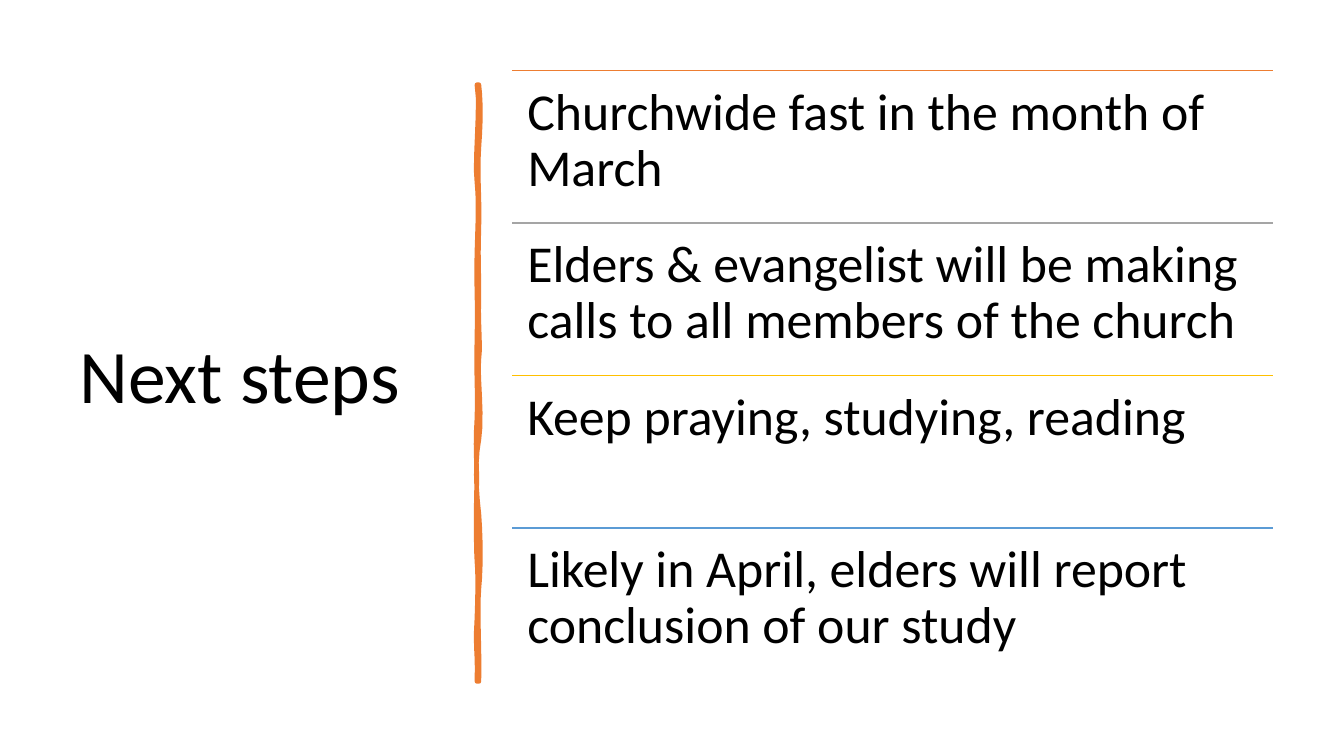
from dataclasses import dataclass

from lxml import etree
from pptx import Presentation, util as u
from pptx.dml.color import RGBColor
from pptx.enum import shapes, text
from pptx.oxml import ns
from pptx.slide import Slide
from pptx.text.text import TextFrame

BLACK = RGBColor(0x00, 0x00, 0x00)
ORANGE = RGBColor(0xED, 0x7D, 0x31)
GREY = RGBColor(0xA5, 0xA5, 0xA5)
GOLD = RGBColor(0xFF, 0xC0, 0x00)
BLUE = RGBColor(0x5B, 0x9B, 0xD5)
FONT = "Calibri"

STEPS_LEFT, STEPS_TOP = 5.08, 0.7
STEP_WIDTH, STEP_HEIGHT = 7.55, 1.51
STEP_PITCH = 1.513
STEP_INSET = u.Inches(0.15)
CURVE_SAMPLES = 6

Point = tuple[float, float]


@dataclass(frozen=True)
class Step:
    wording: str
    color: RGBColor


@dataclass(frozen=True)
class Curve:
    """Cubic segment: two control points and an end point."""

    first: Point
    second: Point
    end: Point

    def sample(self, start: Point) -> list[Point]:
        points = []
        for index in range(1, CURVE_SAMPLES + 1):
            t = index / CURVE_SAMPLES
            weights = ((1 - t) ** 3, 3 * t * (1 - t) ** 2, 3 * t * t * (1 - t), t ** 3)
            corners = (start, self.first, self.second, self.end)
            x, y = (sum(w * c[axis] for w, c in zip(weights, corners)) for axis in (0, 1))
            points.append((x, y))
        return points


STEPS = (
    Step("Churchwide fast in the month of March", ORANGE),
    Step("Elders & evangelist will be making calls to all members of the church", GREY),
    Step("Keep praying, studying, reading", GOLD),
    Step("Likely in April, elders will report conclusion of our study", BLUE),
)

STROKE_START: Point = (4.75, 0.84)
STROKE_CURVES = (
    Curve((4.77, 1.02), (4.77, 1.19), (4.75, 1.46)),
    Curve((4.73, 1.73), (4.76, 1.95), (4.75, 2.26)),
    Curve((4.74, 2.57), (4.75, 2.62), (4.75, 2.94)),
    Curve((4.74, 3.25), (4.77, 3.42), (4.75, 3.56)),
    Curve((4.73, 3.7), (4.79, 4.14), (4.75, 4.36)),
    Curve((4.71, 4.57), (4.72, 4.84), (4.75, 5.1)),
    Curve((4.77, 5.36), (4.77, 5.64), (4.75, 5.84)),
    Curve((4.73, 6.03), (4.76, 6.5), (4.75, 6.76)),
    Curve((4.74, 6.76), (4.73, 6.76), (4.73, 6.76)),
    Curve((4.74, 6.46), (4.71, 6.44), (4.73, 6.13)),
    Curve((4.74, 5.83), (4.74, 5.7), (4.73, 5.57)),
    Curve((4.72, 5.44), (4.72, 4.95), (4.73, 4.77)),
    Curve((4.73, 4.59), (4.71, 4.45), (4.73, 4.15)),
    Curve((4.74, 3.86), (4.72, 3.73), (4.73, 3.35)),
    Curve((4.74, 2.98), (4.72, 2.81), (4.73, 2.5)),
    Curve((4.74, 2.18), (4.75, 2), (4.73, 1.81)),
    Curve((4.7, 1.63), (4.77, 1.04), (4.73, 0.84)),
)


def write_text(frame: TextFrame, wording: str, size: float) -> None:
    frame.text = wording
    frame.word_wrap = True
    frame.auto_size = text.MSO_AUTO_SIZE.NONE
    paragraph = frame.paragraphs[0]
    paragraph.alignment = text.PP_ALIGN.LEFT
    paragraph.line_spacing = 0.9
    font = paragraph.runs[0].font
    font.name = FONT
    font.size = u.Pt(size)
    font.color.rgb = BLACK


def add_title(slide: Slide) -> None:
    title = slide.shapes.title
    title.left, title.top = u.Inches(0.69), u.Inches(0.7)
    title.width, title.height = u.Inches(3.74), u.Inches(6.11)
    write_text(title.text_frame, "Next steps", 54)
    title.text_frame.vertical_anchor = text.MSO_ANCHOR.MIDDLE


def add_brush_stroke(slide: Slide) -> None:
    points = [STROKE_START]
    for curve in STROKE_CURVES:
        points += curve.sample(points[-1])
    start, *rest = [(u.Inches(x), u.Inches(y)) for x, y in points]
    builder = slide.shapes.build_freeform(*start)
    builder.add_line_segments(rest, close=True)
    stroke = builder.convert_to_shape()
    stroke.shadow.inherit = False
    stroke.fill.solid()
    stroke.fill.fore_color.rgb = ORANGE
    stroke.line.color.rgb = ORANGE
    stroke.line.width = u.Pt(3.25)


def add_step(slide: Slide, step: Step, top: float) -> None:
    left, right = u.Inches(STEPS_LEFT), u.Inches(STEPS_LEFT + STEP_WIDTH)
    y = u.Inches(top)
    rule = slide.shapes.add_connector(shapes.MSO_CONNECTOR.STRAIGHT, left, y, right, y)
    rule.line.color.rgb = step.color
    rule.line.width = u.Pt(1)
    etree.SubElement(rule._element.spPr, ns.qn("a:effectLst"))

    box = slide.shapes.add_textbox(left, y, u.Inches(STEP_WIDTH), u.Inches(STEP_HEIGHT))
    frame = box.text_frame
    frame.margin_left = frame.margin_right = STEP_INSET
    frame.margin_top = frame.margin_bottom = STEP_INSET
    write_text(frame, step.wording, 37)


def main() -> None:
    presentation = Presentation()
    presentation.slide_width = u.Inches(13.33)
    presentation.slide_height = u.Inches(7.5)
    title_only = presentation.slide_layouts.get_by_name("Title Only")
    slide = presentation.slides.add_slide(title_only)
    add_title(slide)
    add_brush_stroke(slide)
    for index, step in enumerate(STEPS):
        add_step(slide, step, STEPS_TOP + index * STEP_PITCH)
    presentation.save("out.pptx")


if __name__ == "__main__":
    main()
